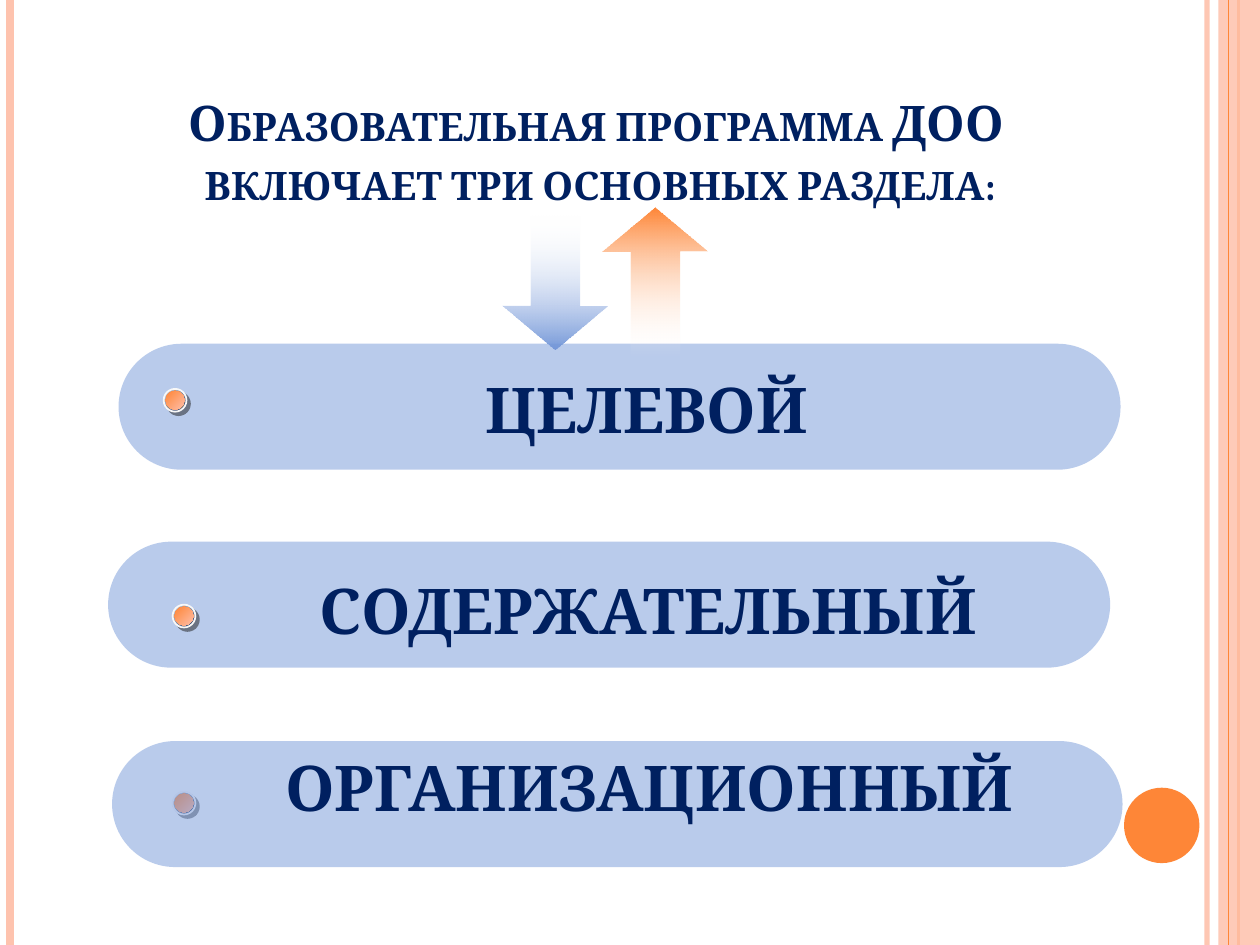
from dataclasses import dataclass

from lxml.etree import SubElement
from pptx import Presentation
from pptx.dml.color import RGBColor as RGB
from pptx.enum.shapes import MSO_CONNECTOR as LINE, MSO_SHAPE as SHAPE
from pptx.enum.text import MSO_ANCHOR as ANCHOR, MSO_AUTO_SIZE as FIT, PP_ALIGN as ALIGN
from pptx.oxml.ns import qn
from pptx.util import Cm, Pt


@dataclass(frozen=True)
class Theme:
    """Colours, font and type sizes of the slide."""
    font: str = "Cambria"
    title: int = 28
    label: int = 36
    navy: str = "002060"
    blue: str = "7598D9"
    orange: str = "FE8637"
    peach: str = "FEC3AE"
    glow: str = "FEBEA8"
    silver: str = "DDDDE1"
    steel: str = "223864"
    rim: str = "F8F8F8"
    shade: str = "1C1C1C"
    white: str = "FFFFFF"


T = Theme()


def set_alpha(sp, percent, index=0):
    """Make the colour at the given index of a shape translucent."""
    color = list(sp._element.spPr.iter(qn("a:srgbClr")))[index]
    SubElement(color, qn("a:alpha"), val=str(percent * 1000))


def add_shape(shapes, kind, x, y, w, h, color=None):
    """Add a plain shape without line or shadow."""
    sp = shapes.add_shape(kind, Cm(x), Cm(y), Cm(w), Cm(h))
    sp.shadow.inherit = False
    sp.line.fill.background()
    if color:
        sp.fill.solid()
        sp.fill.fore_color.rgb = RGB.from_string(color)
    return sp


def set_gradient(sp, start, end, angle):
    """Fill a shape with a two-colour gradient, angle counter-clockwise."""
    sp.fill.gradient()
    sp.fill.gradient_angle = angle
    for stop, color in zip(sp.fill.gradient_stops, (start, end)):
        stop.color.rgb = RGB.from_string(color)


def add_run(p, text, size):
    """Add a bold navy run."""
    r = p.add_run()
    r.text = text
    r.font.name, r.font.size, r.font.bold = T.font, Pt(size), True
    r.font.color.rgb = RGB.from_string(T.navy)
    return r


def add_rule(s, x, height, color, width):
    """Add a vertical rule down the slide."""
    line = s.shapes.add_connector(LINE.STRAIGHT, Cm(x), 0, Cm(x), Cm(height))
    line.line.color.rgb = RGB.from_string(color)
    line.line.width = Pt(width)
    SubElement(line._element.spPr, qn("a:effectLst"))
    return line


def add_frame(s, width, height):
    """Draw the side rules, the right band and the corner disc."""
    set_alpha(add_rule(s, width - 1.07, height, T.peach, 3), 93)
    add_rule(s, 0.2, height, T.peach, 4.5)
    add_rule(s, width - 0.43, height, T.orange, 1.5)
    band = add_shape(s.shapes, SHAPE.RECTANGLE, width - 0.84, 0, 0.84, height, T.peach)
    set_alpha(band, 87)
    add_rule(s, width - 0.64, height, T.orange, 0.75)
    add_shape(s.shapes, SHAPE.OVAL, width - 2.74, height - 3.17, 1.52, 1.52, T.orange)


def add_title(s, x, y, w, h, lines):
    """Place the title and set it in small capitals."""
    sp = s.shapes.title
    sp.left, sp.top, sp.width, sp.height = Cm(x), Cm(y), Cm(w), Cm(h)
    tf = sp.text_frame
    tf.vertical_anchor, tf.word_wrap = ANCHOR.BOTTOM, True
    p = tf.paragraphs[0]
    p.alignment = ALIGN.CENTER
    for i, line in enumerate(lines):
        if i:
            p.add_line_break()
        add_run(p, line, T.title).font._element.set("cap", "small")


def add_arrow(s, kind, x, y, w, h, start, end, clear):
    """Add a block arrow that fades out at the tail."""
    sp = add_shape(s.shapes, kind, x, y, w, h)
    sp.adjustments[0], sp.adjustments[1] = 0.465, 0.421
    set_gradient(sp, start, end, 270)
    set_alpha(sp, 0, clear)


def add_dot(s, x, y, size=0.46, inset=0.04):
    """Add a rimmed round bullet with a hard shadow."""
    group = s.shapes.add_group_shape()
    rim = add_shape(group.shapes, SHAPE.OVAL, x, y, size, size)
    set_gradient(rim, T.silver, T.steel, 315)
    rim.line.color.rgb = RGB.from_string(T.rim)
    rim.line.width = Pt(1)
    effects = rim._element.spPr.find(qn("a:effectLst"))
    shadow = SubElement(effects, qn("a:outerShdw"), dist=str(Pt(2.8)), dir="2700000")
    color = SubElement(shadow, qn("a:srgbClr"), val=T.shade)
    SubElement(color, qn("a:alpha"), val="50000")
    inner = size - 2 * inset
    core = add_shape(group.shapes, SHAPE.OVAL, x + inset, y + inset, inner, inner)
    set_gradient(core, T.orange, T.glow, 315)


def add_section(s, x, y, w, h, text, label, dot, dot_behind=False):
    """Add a pill with its label and bullet, both offset from its corner."""
    if dot_behind:
        add_dot(s, x + dot[0], y + dot[1])
    pill = add_shape(s.shapes, SHAPE.ROUNDED_RECTANGLE, x, y, w, h, T.blue)
    pill.adjustments[0] = 0.5
    set_alpha(pill, 50)
    dx, dy, width = label
    tf = s.shapes.add_textbox(Cm(x + dx), Cm(y + dy), Cm(width), Cm(1.65)).text_frame
    tf.word_wrap, tf.auto_size = True, FIT.SHAPE_TO_FIT_TEXT
    p = tf.paragraphs[0]
    p.alignment, p.line_spacing = ALIGN.CENTER, 0.9
    add_run(p, text, T.label)
    if not dot_behind:
        add_dot(s, x + dot[0], y + dot[1])


def main():
    """Build and save the slide."""
    width, height = 25.4, 19.05
    prs = Presentation()
    prs.slide_width, prs.slide_height = Cm(width), Cm(height)
    s = prs.slides.add_slide(prs.slide_layouts[5])
    add_frame(s, width, height)
    add_title(s, 2.18, 1.19, 19.84, 3.18,
              ("Образовательная программа ДОО ", "включает три основных раздела:"))
    add_arrow(s, SHAPE.DOWN_ARROW, 10.13, 4.32, 2.11, 2.72, T.white, T.blue, 0)
    add_section(s, 2.39, 6.93, 20.2, 2.54, "ЦЕЛЕВОЙ", (1.78, 0.58, 17.73), (0.91, 0.91))
    add_arrow(s, SHAPE.UP_ARROW, 12.15, 4.18, 2.11, 3, T.orange, T.white, 1)
    add_section(s, 2.18, 10.92, 20.2, 2.54, "СОДЕРЖАТЕЛЬНЫЙ",
                (2.18, 0.64, 17.42), (1.3, 1.27))
    add_section(s, 2.26, 14.94, 20.37, 2.54, "ОРГАНИЗАЦИОННЫЙ",
                (2.34, 0.2, 16.99), (1.22, 1.02), dot_behind=True)
    prs.save("out.pptx")


if __name__ == "__main__":
    main()
